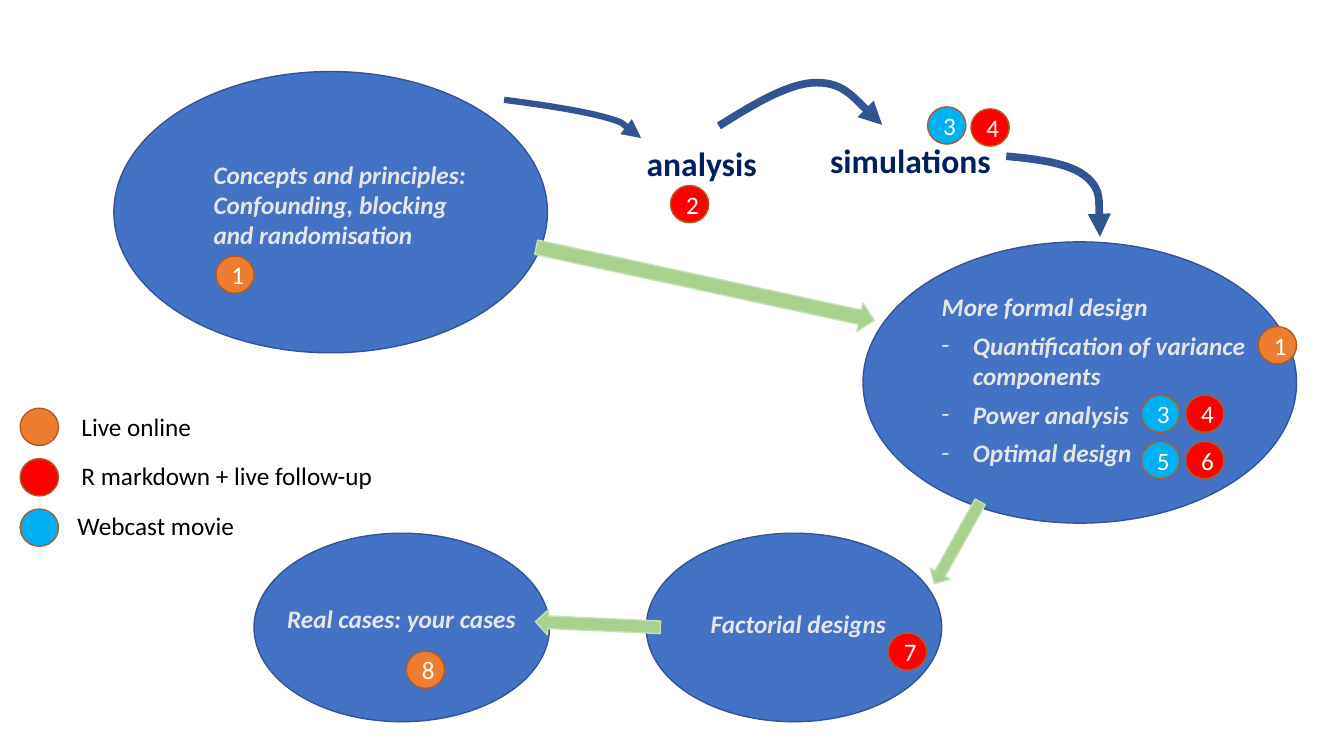
from lxml import etree
from pptx import Presentation
from pptx import util as u
from pptx.dml.color import RGBColor
from pptx.enum import shapes, text
from pptx.oxml.ns import qn

COLORS = {
    "bubble": "4472C4", "navy_line": "325491", "pale": "E7E6E6",
    "heading": "002060", "arrow": "A9D18E", "arrow_line": "C5E0B4",
    "live": "ED7D31", "markdown": "FF0000", "movie": "00B0F0",
    "badge_line": "AF5C24", "white": "FFFFFF", "black": "000000",
}
BUBBLES = [(2.52, 5.29, 2.93, 1.87), (1.13, 0.71, 4.3, 2.79),
           (8.56, 2.4, 4.3, 2.79), (6.41, 5.29, 2.93, 1.87)]
TOPICS = [
    ((2.02, 1.53, 2.78, 1.01),
     ["Concepts and principles:", "Confounding, blocking and randomisation"]),
    ((2.75, 5.94, 2.55, 0.4), ["Real cases: your cases"]),
    ((6.95, 5.99, 3.35, 0.4), ["Factorial designs"]),
]
HEADINGS = [((6, 1.37, 1.92, 0.5), "analysis"),
            ((8.07, 1.34, 1.92, 0.5), "simulations")]
DESIGN_STEPS = ["Quantification of variance components",
                "Power analysis", "Optimal design"]
ARROWS = [((5.28, 2.67, 3.43, 0.29), 12.2), ((9.03, 5.27, 0.93, 0.23), 119.2),
          ((5.31, 6.07, 1.24, 0.25), 182.6)]
CURVES = [
    (4.5, [(5, 0.99), (5.39, 1.04), (5.77, 1.1), (5.99, 1.16),
           (6.21, 1.22), (6.27, 1.31), (6.36, 1.37)]),
    (5.5, [(7.13, 1.25), (7.48, 1.03), (7.83, 0.82), (8.1, 0.82),
           (8.37, 0.82), (8.75, 1.24), (8.75, 1.24)]),
    (5.5, [(9.98, 1.55), (10.3, 1.58), (10.62, 1.62), (10.78, 1.76),
           (10.93, 1.89), (10.91, 2.35), (10.91, 2.35)]),
]
BADGES = [
    (2.14, 2.54, "live", "1"), (12.48, 3.24, "live", "1"),
    (6.65, 1.84, "markdown", "2"), (9.2, 1.06, "movie", "3"),
    (9.63, 1.08, "markdown", "4"), (11.32, 3.92, "movie", "3"),
    (11.76, 3.92, "markdown", "4"), (11.32, 4.38, "movie", "5"),
    (11.76, 4.38, "markdown", "6"), (8.81, 6.28, "markdown", "7"),
    (4.03, 6.46, "live", "8"),
]
LEGEND = [("live", "Live online", 0.71, 1.37),
          ("markdown", "R markdown + live follow-up", 0.71, 3.13),
          ("movie", "Webcast movie", 0.67, 2.17)]


class CourseMap:
    """Draws the elements of the course map on one slide."""

    def __init__(self, prs):
        self.font = "Calibri"
        self.s = prs.slides.add_slide(prs.slide_layouts[1])
        title = self.s.shapes.title._element
        title.getparent().remove(title)

    def rgb(self, name):
        return RGBColor.from_string(COLORS[name])

    def run(self, p, words, color, size=18, bold=False, italic=False):
        r = p.add_run()
        r.text = words
        r.font.name, r.font.size = self.font, u.Pt(size)
        r.font.bold, r.font.italic = bold, italic
        r.font.color.rgb = self.rgb(color)

    def shape(self, kind, box, fill, line):
        sp = self.s.shapes.add_shape(kind, *map(u.Inches, box))
        sp.shadow.inherit = False
        sp.fill.solid()
        sp.fill.fore_color.rgb = self.rgb(fill)
        sp.line.color.rgb = self.rgb(line)
        sp.line.width = u.Pt(1)
        return sp

    def bubble(self, box):
        self.shape(shapes.MSO_SHAPE.OVAL, box, "bubble", "navy_line")

    def arrow(self, box, angle):
        sp = self.shape(shapes.MSO_SHAPE.RIGHT_ARROW, box, "arrow", "arrow_line")
        sp.rotation = angle

    def badge(self, left, top, kind, number=""):
        sp = self.shape(shapes.MSO_SHAPE.OVAL, (left, top, 0.38, 0.37),
                        kind, "badge_line")
        if number:
            p = sp.text_frame.paragraphs[0]
            p.alignment = text.PP_ALIGN.CENTER
            self.run(p, number, "white")

    def label(self, box, lines, color, align=text.PP_ALIGN.LEFT, **style):
        tf = self.s.shapes.add_textbox(*map(u.Inches, box)).text_frame
        tf.word_wrap = True
        for i, words in enumerate(lines):
            p = tf.add_paragraph() if i else tf.paragraphs[0]
            p.alignment = align
            self.run(p, words, color, **style)

    def body_list(self, box, lead, items):
        sp = self.s.placeholders[1]
        self.s.shapes._spTree.append(sp._element)
        sp.left, sp.top, sp.width, sp.height = map(u.Inches, box)
        tf = sp.text_frame
        tf.auto_size = text.MSO_AUTO_SIZE.NONE
        for i, words in enumerate([lead] + items):
            p = tf.add_paragraph() if i else tf.paragraphs[0]
            p.space_before = u.Pt(6 if i else 0)
            indent = u.Inches(0.31 if i else 0)
            pPr = p._p.get_or_add_pPr()
            pPr.set("marL", str(indent))
            pPr.set("indent", str(-indent))
            if i:
                etree.SubElement(pPr, qn("a:buFont"), typeface=self.font)
                etree.SubElement(pPr, qn("a:buChar"), char="-")
            else:
                etree.SubElement(pPr, qn("a:buNone"))
            self.run(p, words, "pale", bold=True, italic=True)

    def curve(self, width, points):
        start, *rest = [(u.Inches(x), u.Inches(y)) for x, y in points]
        builder = self.s.shapes.build_freeform(*start)
        builder.add_line_segments(rest, close=False)
        sp = builder.convert_to_shape()
        sp.shadow.inherit = False
        sp.fill.background()
        sp.line.color.rgb = self.rgb("navy_line")
        sp.line.width = u.Pt(width)
        etree.SubElement(sp.line._get_or_add_ln(), qn("a:tailEnd"), type="triangle")
        outline = next(sp._element.iter(qn("a:path")))
        segments = outline.findall(qn("a:lnTo"))
        for i in range(0, len(segments), 3):
            bezier = etree.SubElement(outline, qn("a:cubicBezTo"))
            for segment in segments[i:i + 3]:
                bezier.append(segment[0])
                outline.remove(segment)


def main():
    prs = Presentation()
    prs.slide_width, prs.slide_height = u.Inches(13.33), u.Inches(7.5)
    course = CourseMap(prs)
    for box in BUBBLES:
        course.bubble(box)
    for box, lines in TOPICS:
        course.label(box, lines, "pale", bold=True, italic=True)
    for box, words in HEADINGS:
        course.label(box, [words], "heading", text.PP_ALIGN.CENTER,
                     size=24, bold=True)
    course.body_list((9.24, 2.84, 3.35, 1.87), "More formal design", DESIGN_STEPS)
    for box, angle in ARROWS:
        course.arrow(box, angle)
    for width, points in CURVES:
        course.curve(width, points)
    for badge in BADGES:
        course.badge(*badge)
    for i, (kind, words, left, width) in enumerate(LEGEND):
        course.badge(0.2, 4.05 + 0.5 * i, kind)
        course.label((left, 4.03 + 0.49 * i, width, 0.4), [words], "black")
    prs.save("out.pptx")


if __name__ == "__main__":
    main()
